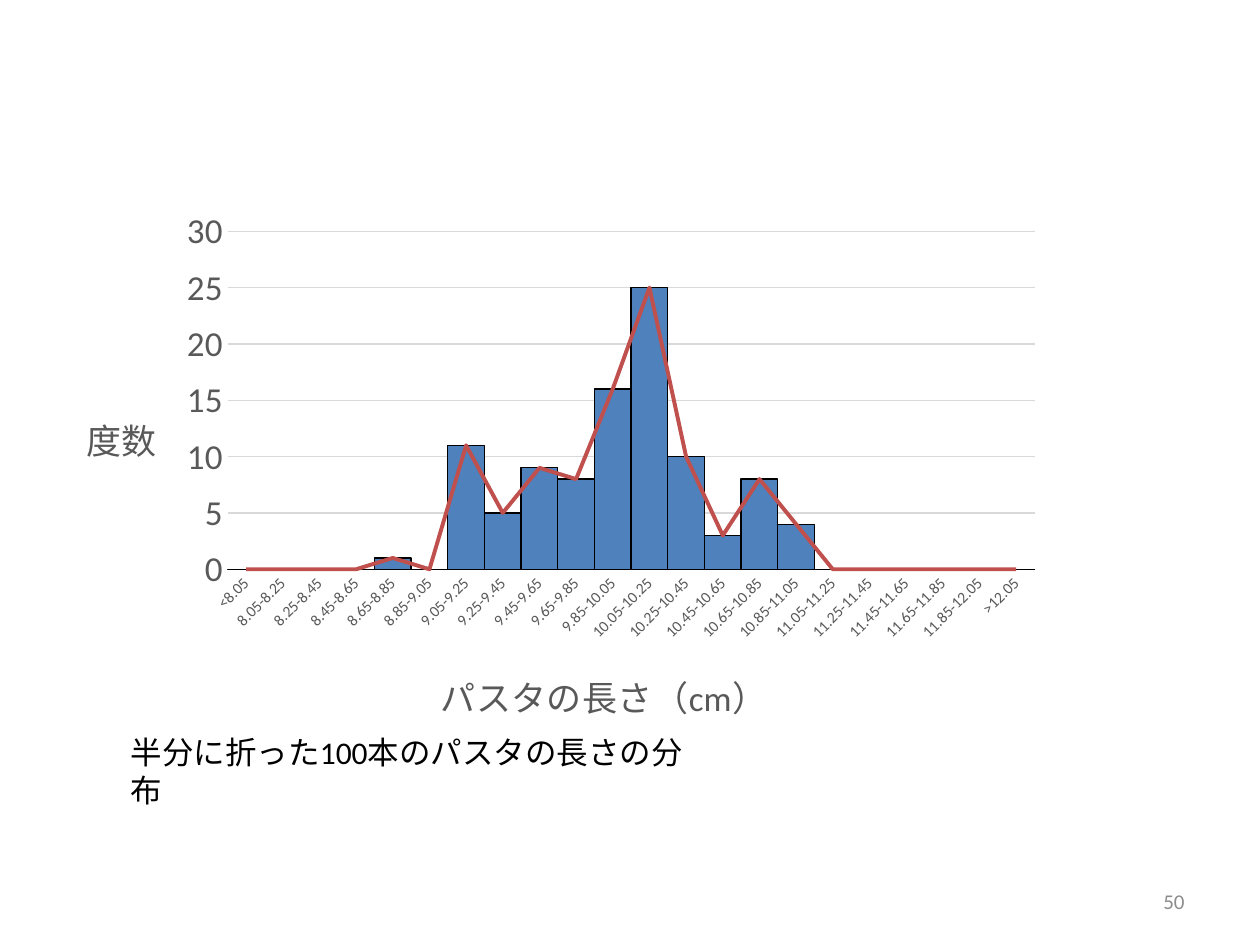
"""Build a slide with a histogram and frequency polygon of pasta lengths."""
from lxml.etree import SubElement
from pptx import Presentation
from pptx.chart.data import CategoryChartData
from pptx.dml.color import RGBColor as Color
from pptx.enum.chart import XL_CHART_TYPE as ChartType, XL_TICK_MARK as TickMark
from pptx.enum.text import MSO_ANCHOR as Anchor, PP_ALIGN as Align
from pptx.oxml import parse_xml
from pptx.oxml.ns import nsdecls, qn
from pptx.util import Inches, Pt

THEME = {
    "font": "Calibri",
    "bar": Color.from_string("4F81BD"),
    "line": Color.from_string("C0504D"),
    "text": Color.from_string("000000"),
    "axis": Color.from_string("595959"),
    "grid": Color.from_string("D9D9D9"),
    "number": Color.from_string("8C8C8C"),
    "large": 20, "caption": 18, "footer": 12, "small": 9,
}


def style_font(font, size, color):
    font.name = THEME["font"]
    font.size = Pt(THEME[size])
    font.bold = False
    font.color.rgb = THEME[color]


def place_in_chart(parent, index, **shares):
    for old_layout in parent.findall(qn("c:layout")):
        parent.remove(old_layout)
    layout = parse_xml(f"<c:layout {nsdecls('c')}><c:manualLayout/></c:layout>")
    manual = layout[0]
    if "w" in shares:
        SubElement(manual, qn("c:layoutTarget")).set("val", "inner")
    for side in "xy":
        SubElement(manual, qn(f"c:{side}Mode")).set("val", "edge")
    for name, share in shares.items():
        SubElement(manual, qn(f"c:{name}")).set("val", str(share))
    parent.insert(index, layout)


presentation = Presentation()
presentation.slide_width, presentation.slide_height = Inches(10), Inches(7.5)
slide = presentation.slides.add_slide(presentation.slide_layouts[6])

edges = [f"{8.05 + 0.2 * step:.2f}" for step in range(21)]
counts = [0, 0, 0, 0, 1, 0, 11, 5, 9, 8, 16, 25, 10, 3, 8, 4] + [0] * 6
chart_data = CategoryChartData()
chart_data.categories = [
    f"<{edges[0]}",
    *(f"{low}-{high}" for low, high in zip(edges, edges[1:])),
    f">{edges[-1]}",
]
for name in ("Series 1", "Series 2"):
    chart_data.add_series(name, counts)

chart = slide.shapes.add_chart(
    ChartType.COLUMN_CLUSTERED,
    Inches(0.48), Inches(1.58), Inches(7.81), Inches(4.26), chart_data,
).chart
chart.has_legend = False
chart.has_title = False
style_font(chart.font, "small", "text")

bar_plot = chart.plots[0]
bar_plot.gap_width = 0
bar_plot.vary_by_categories = False
bars, polygon = bar_plot.series
bars.format.fill.solid()
bars.format.fill.fore_color.rgb = THEME["bar"]
bars.format.line.color.rgb = THEME["text"]
bars.format.line.width = Pt(0.75)
polygon.format.line.color.rgb = THEME["line"]
polygon.format.line.width = Pt(2.25)

axes = (
    (chart.category_axis, "パスタの長さ（cm）", "small", 0.38, 0.86),
    (chart.value_axis, "度数", "large", 0.02, 0.38),
)
for axis, title, tick_size, left, top in axes:
    axis.major_tick_mark = axis.minor_tick_mark = TickMark.NONE
    style_font(axis.tick_labels.font, tick_size, "axis")
    title_frame = axis.axis_title.text_frame
    title_frame.text = title
    style_font(title_frame.paragraphs[0].runs[0].font, "large", "axis")
    title_frame._txBody.bodyPr.set("rot", "0")
    place_in_chart(axis.axis_title._element, 1, x=left, y=top)

category_axis, value_axis = chart.category_axis, chart.value_axis
category_axis._element.txPr.bodyPr.set("rot", "-2700000")
category_axis.format.line.color.rgb = THEME["grid"]
category_axis.format.line.width = Pt(0.75)
value_axis.format.line.fill.background()
value_axis.minimum_scale, value_axis.maximum_scale = 0, 30
value_axis.major_unit = 5
value_axis.has_major_gridlines = True
value_axis.major_gridlines.format.line.color.rgb = THEME["grid"]
value_axis.major_gridlines.format.line.width = Pt(0.75)

bar_group = bars._element.getparent()
line_group = parse_xml(
    f"<c:lineChart {nsdecls('c')}><c:grouping val='standard'/>"
    "<c:varyColors val='0'/><c:marker val='1'/></c:lineChart>"
)
line_series = polygon._element
for bar_setting in line_series.findall(qn("c:invertIfNegative")):
    line_series.remove(bar_setting)
line_series.find(qn("c:spPr")).addnext(
    parse_xml(f"<c:marker {nsdecls('c')}><c:symbol val='none'/></c:marker>")
)
SubElement(line_series, qn("c:smooth")).set("val", "0")
line_group.insert(2, line_series)
for axis_id in bar_group.findall(qn("c:axId")):
    SubElement(line_group, qn("c:axId")).set("val", axis_id.get("val"))
bar_group.addnext(line_group)
place_in_chart(bar_group.getparent(), 0, x=0.17, y=0.06, w=0.82, h=0.63)

labels = (
    ("半分に折った100本のパスタの長さの分布", (0.94, 5.77, 4.65, 0.4),
     "caption", "text", Align.LEFT, Anchor.TOP),
    ("50", (7.17, 6.95, 2.33, 0.4),
     "footer", "number", Align.RIGHT, Anchor.MIDDLE),
)
for text, bounds, size, color, alignment, anchor in labels:
    text_frame = slide.shapes.add_textbox(*map(Inches, bounds)).text_frame
    text_frame.word_wrap = True
    text_frame.vertical_anchor = anchor
    text_frame.text = text
    paragraph = text_frame.paragraphs[0]
    paragraph.alignment = alignment
    style_font(paragraph.runs[0].font, size, color)

presentation.save("out.pptx")
